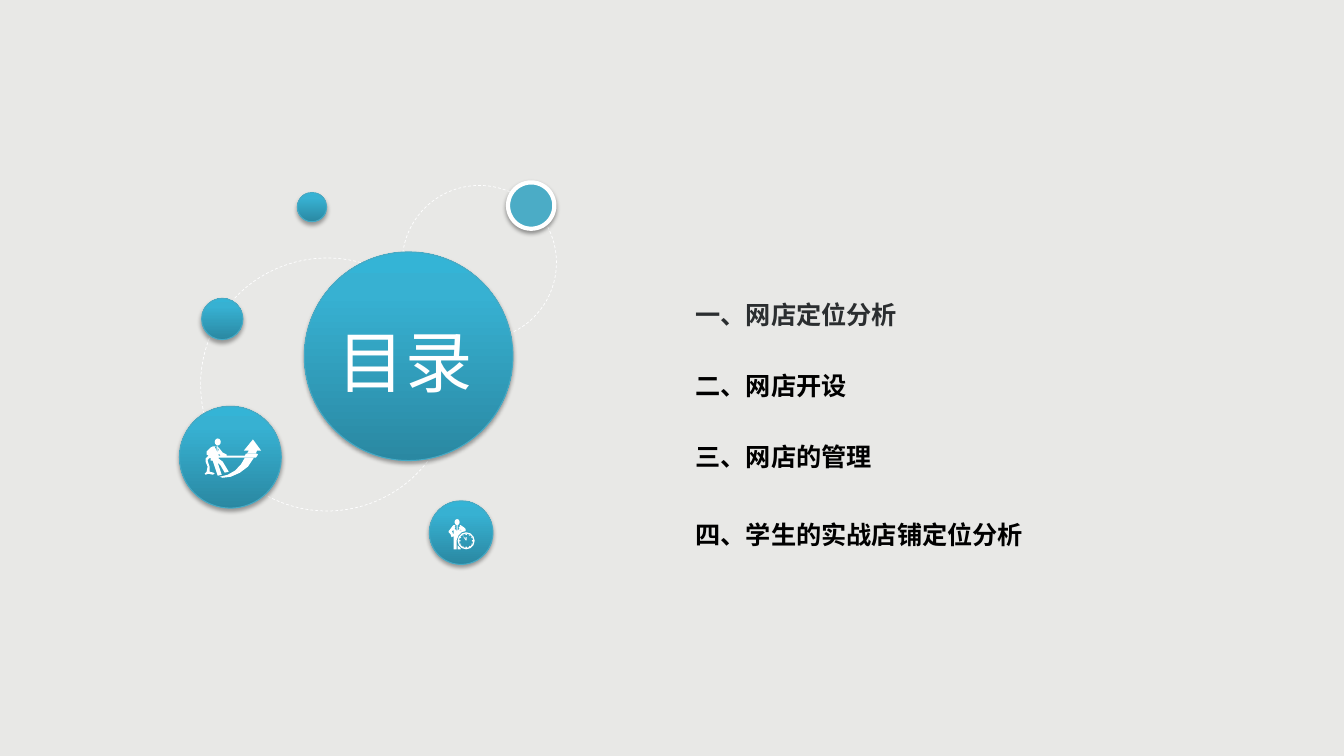
import copy
import math

from lxml import etree
from pptx import Presentation
from pptx.dml.color import RGBColor
from pptx.enum import dml, shapes, text
from pptx.oxml import ns
from pptx.util import Pt

BACKDROP = RGBColor(0xE8, 0xE8, 0xE6)
WHITE = RGBColor(0xFF, 0xFF, 0xFF)
BLACK = RGBColor(0x00, 0x00, 0x00)
CHARCOAL = RGBColor(0x2B, 0x2E, 0x30)
TEAL = RGBColor(0x4B, 0xAC, 0xC6)
RIM = RGBColor(0x46, 0xAA, 0xC5)
GRADIENT = [
    (0, RGBColor(0x2A, 0x88, 0xA2)),
    (0.8, RGBColor(0x37, 0xB1, 0xD2)),
    (1, RGBColor(0x34, 0xB4, 0xD6)),
]
FONT = "Noto Sans CJK SC"
ICON_UNIT = 0.72

ORBITS = [(287.3, 132.5, 110.2), (143.3, 184.3, 180.7)]
BALLS = [
    (217.4, 180, 149),
    (306.7, 357.8, 45.4),
    (144, 213.1, 29.5),
    (212.4, 137.5, 20.9),
    (128.2, 290.2, 72.7),
]
CONTENTS = [
    ("一、网店定位分析", CHARCOAL, 0),
    ("二、网店开设", BLACK, 29),
    ("三、网店的管理", BLACK, 29),
    ("四、学生的实战店铺定位分析", BLACK, 34),
]

CLOCK_MAN = [
    [(462, 527), (462, 525), (460, 523), (457, 521), (456, 521), (457, 522),
     (455, 523), (456, 524), (454, 527), (454, 521), (453, 521), (453, 527),
     (451, 524), (452, 523), (451, 522), (452, 521), (450, 521), (449, 522),
     (446, 526), (445, 527), (445, 528), (447, 530), (448, 533), (450, 532),
     (450, 545), (453, 545), (453, 536), (455, 531), (458, 528)],
    [(457, 526), (457, 525), (458, 526), (456, 527), (455, 527)],
    [(450, 530), (449, 529), (449, 528), (448, 527), (450, 526)],
]
CLOCK_MAN_LEG = [[(454, 541), (454, 545), (457, 545), (457, 544)]]
CLOCK_HANDS = [[(463, 536), (463, 533), (462, 533), (462, 535), (460, 532),
                (460, 533), (462, 536)]]

SWOOSH = [[(243, 454), (239, 461), (233, 467), (226, 471), (218, 473),
           (221, 474), (229, 473), (238, 469), (246, 463), (252, 454)]]
ARROWHEAD = [[(245, 450), (254, 450), (255, 447), (259, 447), (251, 436),
              (242, 447), (247, 447)]]
ROPE_MAN = [
    [(255, 450), (244, 450), (243, 452), (225, 452), (225, 451), (221, 449),
     (217, 444), (216, 444), (217, 446), (216, 449), (216, 442), (215, 442),
     (215, 449), (214, 445), (213, 444), (214, 443), (211, 443), (209, 444),
     (205, 448), (205, 451), (207, 452), (204, 455), (204, 458), (206, 463),
     (205, 468), (203, 470), (204, 471), (207, 470), (211, 471), (213, 470),
     (212, 469), (208, 468), (208, 463), (206, 457), (207, 455), (209, 454),
     (209, 457), (211, 457), (216, 472), (220, 471), (216, 459), (219, 462),
     (223, 469), (227, 468), (221, 458), (217, 455), (217, 454), (254, 454),
     (256, 451)],
    [(217, 452), (217, 450), (218, 451), (219, 452)],
]


class SlideBuilder:
    def __init__(self, slide):
        self.slide = slide
        self.font = FONT
        self.icon_unit = ICON_UNIT

    def oval(self, left, top, width, height=None, fill=None, into=None,
             kind=shapes.MSO_SHAPE.OVAL):
        target = into or self.slide.shapes
        oval = target.add_shape(kind, Pt(left), Pt(top), Pt(width), Pt(height or width))
        oval.shadow.inherit = False
        oval.line.fill.background()
        if fill is None:
            oval.fill.background()
        else:
            oval.fill.solid()
            oval.fill.fore_color.rgb = fill
        return oval

    def outline(self, shape, color, width, dash=None):
        shape.line.color.rgb = color
        shape.line.width = Pt(width)
        if dash:
            shape.line.dash_style = dash

    def drop_shadow(self, shape, opacity, distance):
        effects = shape._element.spPr.find(ns.qn("a:effectLst"))
        shadow = etree.SubElement(
            effects, ns.qn("a:outerShdw"), blurRad=str(int(Pt(3.1))),
            dist=str(int(Pt(distance))), dir="5400000", algn="t", rotWithShape="0")
        color = etree.SubElement(shadow, ns.qn("a:srgbClr"), val=str(BLACK))
        etree.SubElement(color, ns.qn("a:alpha"), val=str(opacity * 1000))

    def orbit(self, left, top, size):
        self.outline(self.oval(left, top, size), WHITE, 0.5, dml.MSO_LINE.DASH)

    def ball(self, left, top, size):
        ball = self.oval(left, top, size)
        ball.fill.gradient()
        ball.fill.gradient_angle = 90
        stops = ball._element.spPr.find(ns.qn("a:gradFill")).find(ns.qn("a:gsLst"))
        stops.append(copy.deepcopy(stops[-1]))
        for stop, (position, color) in zip(ball.fill.gradient_stops, GRADIENT):
            stop.position = position
            stop.color.rgb = color
        self.outline(ball, RIM, 0.75)
        self.drop_shadow(ball, 35, 1.8)

    def ring(self, left, top, size):
        ring = self.oval(left, top, size, fill=TEAL)
        self.outline(ring, WHITE, 3)
        self.drop_shadow(ring, 38, 1.6)

    def silhouette(self, group, contours):
        first, *holes = contours
        builder = group.shapes.build_freeform(*first[0], scale=Pt(self.icon_unit))
        builder.add_line_segments(first[1:], close=True)
        for hole in holes:
            builder.move_to(*hole[0])
            builder.add_line_segments(hole[1:], close=True)
        figure = builder.convert_to_shape()
        figure.shadow.inherit = False
        figure.fill.solid()
        figure.fill.fore_color.rgb = WHITE
        figure.line.fill.background()

    def icon(self, head, figures):
        group = self.slide.shapes.add_group_shape()
        self.oval(*head, fill=WHITE, into=group.shapes)
        for contours in figures:
            self.silhouette(group, contours)
        return group

    def clock_face(self, group, center_x, center_y, radius):
        face = self.oval(center_x - radius, center_y - radius, 2 * radius,
                         fill=WHITE, into=group.shapes, kind=shapes.MSO_SHAPE.DONUT)
        face.adjustments[0] = 0.08
        for hour in range(12):
            angle = math.radians(30 * hour)
            size = 0.7 if hour % 3 else 1.1
            self.oval(center_x + 4.6 * math.cos(angle) - size / 2,
                      center_y + 4.6 * math.sin(angle) - size / 2,
                      size, fill=WHITE, into=group.shapes)

    def place(self, holder, left, top, width, height):
        holder.left, holder.top = Pt(left), Pt(top)
        holder.width, holder.height = Pt(width), Pt(height)
        self.slide.shapes._spTree.append(holder._element)
        frame = holder.text_frame
        frame.word_wrap = True
        frame.auto_size = text.MSO_AUTO_SIZE.NONE
        frame.margin_left = frame.margin_right = 0
        frame.margin_top = frame.margin_bottom = 0
        return frame

    def set_paragraph(self, para, words, size, color, bold, align, gap=0):
        para.text = words
        properties = para._p.get_or_add_pPr()
        properties.set("marL", "0")
        properties.set("indent", "0")
        etree.SubElement(properties, ns.qn("a:buNone"))
        para.alignment = align
        para.space_before = Pt(gap)
        para.font.size = Pt(size)
        para.font.bold = bold
        para.font.color.rgb = color
        para.font.name = self.font
        defaults = properties.find(ns.qn("a:defRPr"))
        etree.SubElement(defaults, ns.qn("a:ea"), typeface=self.font)

    def title(self, words, *bounds):
        frame = self.place(self.slide.shapes.title, *bounds)
        frame.vertical_anchor = text.MSO_ANCHOR.MIDDLE
        self.set_paragraph(frame.paragraphs[0], words, 48, WHITE, False,
                           text.PP_ALIGN.CENTER)

    def contents(self, entries, *bounds):
        frame = self.place(self.slide.placeholders[1], *bounds)
        frame.vertical_anchor = text.MSO_ANCHOR.TOP
        for index, (words, color, gap) in enumerate(entries):
            para = frame.add_paragraph() if index else frame.paragraphs[0]
            self.set_paragraph(para, words, 18, color, True, text.PP_ALIGN.LEFT, gap)


def main():
    deck = Presentation()
    deck.slide_width, deck.slide_height = Pt(960), Pt(540)
    page = deck.slides.add_slide(deck.slide_layouts[1])
    page.background.fill.solid()
    page.background.fill.fore_color.rgb = BACKDROP
    builder = SlideBuilder(page)
    for orbit in ORBITS:
        builder.orbit(*orbit)
    for ball in BALLS:
        builder.ball(*ball)
    builder.ring(362.9, 130.3, 33.1)
    builder.title("目录", 227.5, 224.6, 123.8, 65.5)
    clock = builder.icon((324.7, 370.8, 3.6, 4.3), [CLOCK_MAN, CLOCK_MAN_LEG, CLOCK_HANDS])
    builder.clock_face(clock, 333, 386.3, 6.1)
    builder.icon((153.4, 313.2, 4.3, 5), [SWOOSH, ARROWHEAD, ROPE_MAN])
    builder.contents(CONTENTS, 496.8, 213.8, 265, 200)
    deck.save("out.pptx")


if __name__ == "__main__":
    main()
